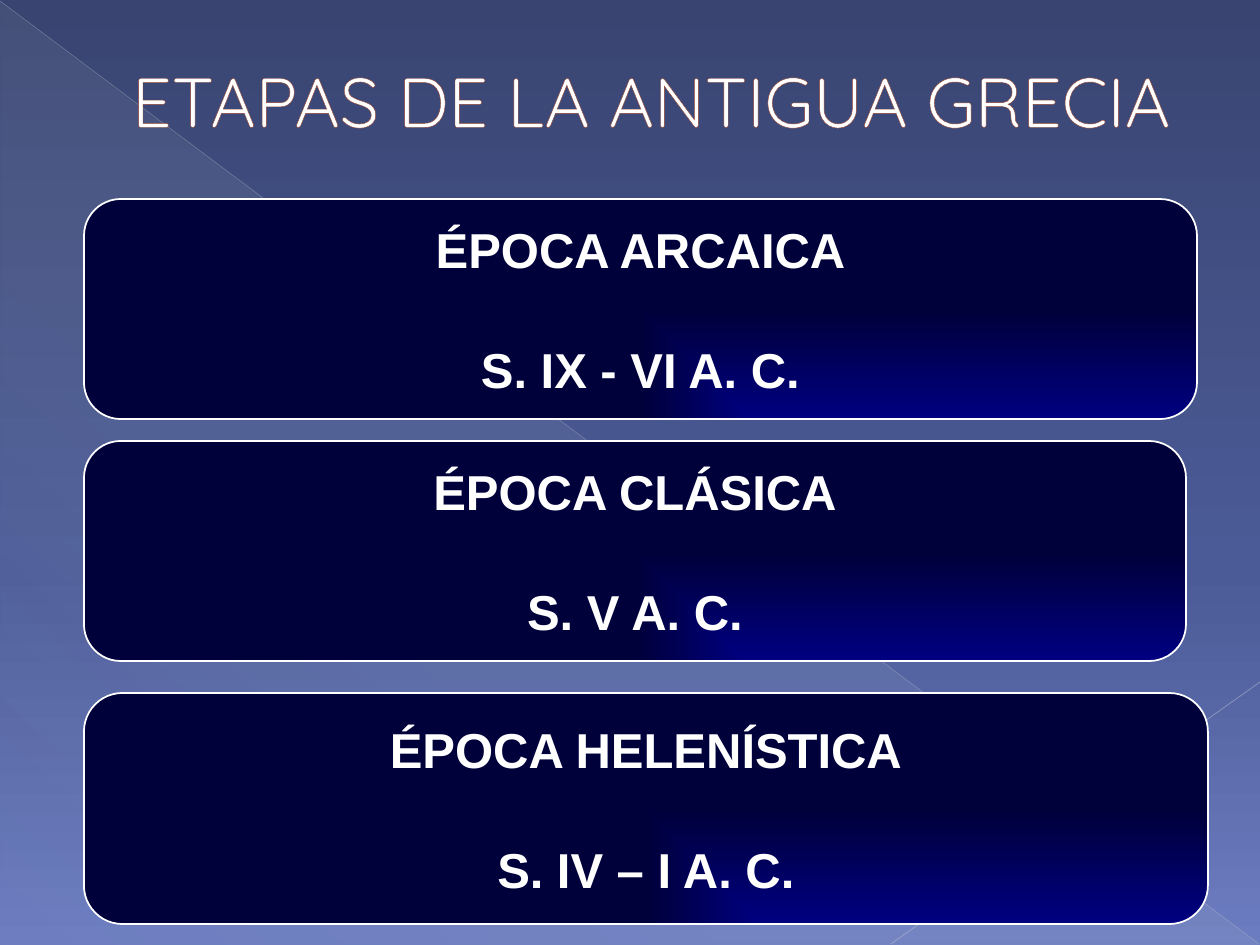
from dataclasses import dataclass

from lxml import etree
from pptx import Presentation
from pptx.dml.color import RGBColor
from pptx.enum.shapes import MSO_CONNECTOR, MSO_SHAPE
from pptx.enum.text import MSO_ANCHOR, MSO_AUTO_SIZE, PP_ALIGN
from pptx.oxml.ns import qn
from pptx.util import Pt

EMU_PER_PX = 914400 / 126
TITLE_ONLY = 5
TRIANGLE = MSO_SHAPE.RIGHT_TRIANGLE
ROUNDED = MSO_SHAPE.ROUNDED_RECTANGLE
STRAIGHT = MSO_CONNECTOR.STRAIGHT
MIDDLE = MSO_ANCHOR.MIDDLE
LEFT, CENTER = PP_ALIGN.LEFT, PP_ALIGN.CENTER


@dataclass(frozen=True)
class Theme:
    text: str = "FFFFFF"
    title_outline: str = "914533"
    title_font: str = "Quicksand"
    body_font: str = "Arial"
    title_size: int = 40
    body_size: int = 28
    date_gap: int = 35
    # Gradient stops: position %, colour, opacity %
    sky: tuple = ((0, "394471", 100), (60, "4B5B97", 100), (100, "6C7CC0", 100))
    sheen: tuple = ((0, "C5D1D7", 10), (70, "C5D1D7", 8), (100, "C5D1D7", 1))
    navy: tuple = ((0, "000080", 100), (100, "00003B", 100))


def px(length):
    return round(length * EMU_PER_PX)


def add_node(parent, tag, **attributes):
    node = etree.SubElement(parent, qn(tag))
    for name, value in attributes.items():
        node.set(name, str(value))
    return node


def set_opacity(color_node, percent):
    if percent < 100:
        add_node(color_node, "a:alpha", val=percent * 1000)


def set_gradient(fill, owner, stops, angle=None):
    """Fill linearly at an angle, or from the bottom right corner without one."""
    fill.gradient()
    gradient = owner.find(".//" + qn("a:gradFill"))
    for child in list(gradient):
        gradient.remove(child)
    stop_list = add_node(gradient, "a:gsLst")
    for position, color, opacity in stops:
        stop = add_node(stop_list, "a:gs", pos=position * 1000)
        set_opacity(add_node(stop, "a:srgbClr", val=color), opacity)
    if angle is None:
        corner = add_node(gradient, "a:path", path="rect")
        add_node(corner, "a:fillToRect", l=100000, t=100000)
    else:
        add_node(gradient, "a:lin", ang=angle * 60000, scaled=0)


class SlideBuilder:
    def __init__(self, slide, theme):
        self.slide = slide
        self.theme = theme

    def background(self):
        set_gradient(self.slide.background.fill, self.slide.element, self.theme.sky, 90)

    def format_run(self, run, font, size, bold=False):
        run.font.name = font
        run.font.size = Pt(size)
        run.font.bold = bold
        run.font.color.rgb = RGBColor.from_string(self.theme.text)

    def shape(self, preset, box, stops, angle=None):
        shape = self.slide.shapes.add_shape(preset, *map(px, box))
        shape.shadow.inherit = False
        set_gradient(shape.fill, shape.element, stops, angle)
        return shape

    def sheen(self, box):
        self.shape(TRIANGLE, box, self.theme.sheen, 133).line.fill.background()

    def ray(self, start, end, color, width, opacity):
        ray = self.slide.shapes.add_connector(STRAIGHT, *map(px, start + end))
        ray.line.width = Pt(width)
        ray.line.color.rgb = RGBColor.from_string(color)
        set_opacity(ray.element.find(".//" + qn("a:srgbClr")), opacity)
        add_node(ray.element.spPr, "a:effectLst")

    def title(self, text, box, indent):
        title = self.slide.shapes.title
        title.left, title.top, title.width, title.height = map(px, box)
        frame = title.text_frame
        frame.text = text
        frame.auto_size = MSO_AUTO_SIZE.NONE
        frame.vertical_anchor = MIDDLE
        frame.margin_left = px(indent)
        frame.paragraphs[0].alignment = LEFT
        run = frame.paragraphs[0].runs[0]
        self.format_run(run, self.theme.title_font, self.theme.title_size)
        properties = run.font._element
        outline = add_node(properties, "a:ln", w=Pt(0.5))
        add_node(add_node(outline, "a:solidFill"), "a:srgbClr", val=self.theme.title_outline)
        properties.insert(0, outline)

    def period(self, name, dates, box):
        panel = self.shape(ROUNDED, box, self.theme.navy)
        panel.adjustments[0] = 0.167
        panel.line.color.rgb = RGBColor.from_string(self.theme.text)
        panel.line.width = Pt(1)
        frame = panel.text_frame
        frame.word_wrap = False
        frame.vertical_anchor = MIDDLE
        frame.text = f"{name}\n{dates}"
        for paragraph in frame.paragraphs:
            paragraph.alignment = CENTER
            self.format_run(paragraph.runs[0], self.theme.body_font, self.theme.body_size, True)
        frame.paragraphs[1].space_before = Pt(self.theme.date_gap)


def main():
    presentation = Presentation()
    presentation.slide_width, presentation.slide_height = px(1260), px(945)
    slide = presentation.slides.add_slide(presentation.slide_layouts[TITLE_ONLY])
    builder = SlideBuilder(slide, Theme())

    builder.background()
    builder.sheen((1, 2, 1259, 943))
    builder.ray((0, 1), (1259, 944), "BABECD", 0.39, 35)
    builder.ray((1260, 682), (891, 944), "C2C5D2", 0.47, 45)
    # The title placeholder belongs in front of the backdrop
    slide.shapes._spTree.append(slide.shapes.title.element)
    builder.title("ETAPAS DE LA ANTIGUA GRECIA", (53, 0, 1134, 199), 79)

    periods = (
        ("ÉPOCA ARCAICA", "S. IX - VI A. C.", 199, 1113, 220),
        ("ÉPOCA CLÁSICA", "S. V A. C.", 441, 1102, 220),
        ("ÉPOCA HELENÍSTICA", "S. IV – I A. C.", 693, 1124, 231),
    )
    for name, dates, top, width, height in periods:
        builder.period(name, dates, (84, top, width, height))

    presentation.save("out.pptx")


if __name__ == "__main__":
    main()
